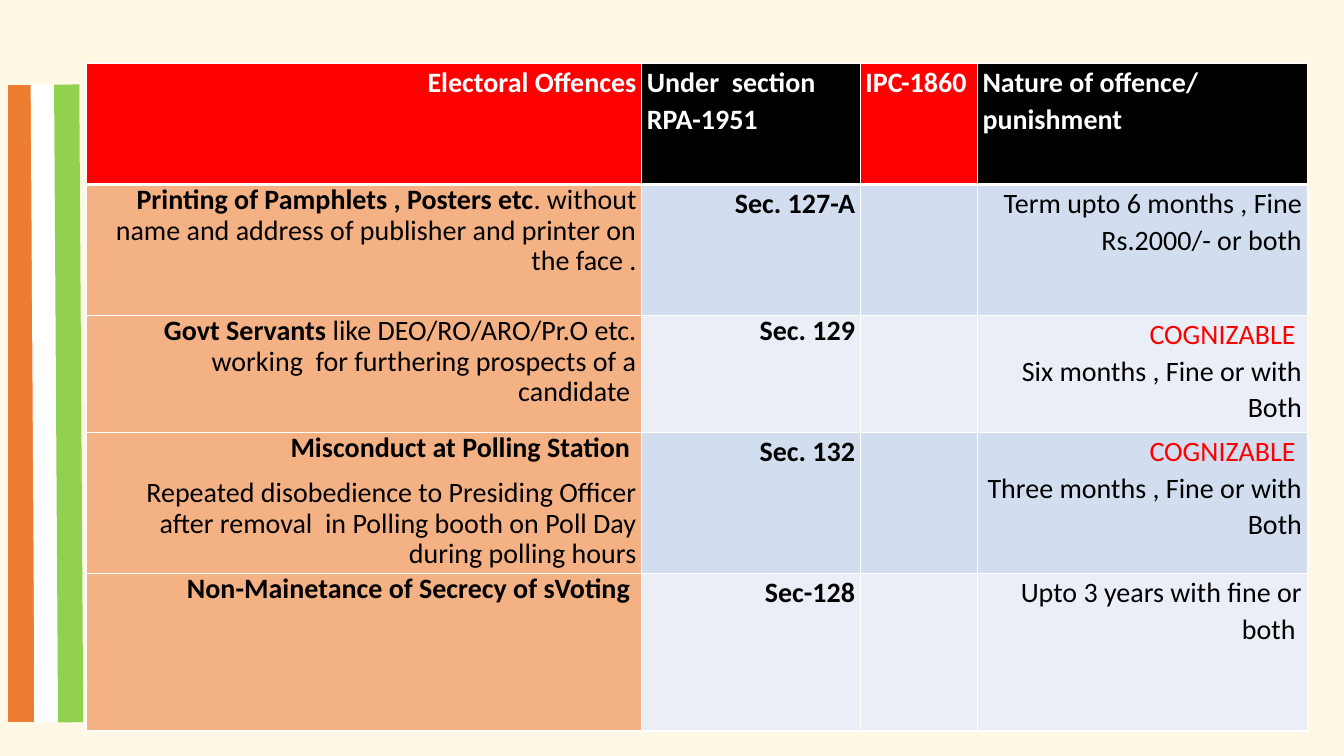
from dataclasses import dataclass

from lxml.etree import SubElement
from pptx import Presentation
from pptx.dml.color import RGBColor as Rgb
from pptx.enum.shapes import MSO_CONNECTOR as Connector
from pptx.enum.text import PP_ALIGN as Align
from pptx.oxml.ns import qn
from pptx.slide import Slide
from pptx.table import _Cell as Cell
from pptx.util import Cm, Pt


@dataclass(frozen=True)
class Theme:
    page: str = "FFF8E5"
    white: str = "FFFFFF"
    black: str = "000000"
    red: str = "FF0000"
    saffron: str = "ED7D31"
    green: str = "92D050"
    offence: str = "F4B183"
    band_dark: str = "D2DEEF"
    band_light: str = "EAEFF7"
    font: str = "Calibri"
    text_size: float = 20
    stripe_width: float = 18
    rule: float = 1
    header_rule: float = 3


THEME = Theme()


@dataclass(frozen=True)
class Span:
    text: str
    bold: bool = False
    color: str = THEME.black


@dataclass(frozen=True)
class Para:
    spans: tuple[Span, ...]
    align: Align = Align.RIGHT
    spacing: float = 1.07
    indent: float = 0


@dataclass(frozen=True)
class Stripe:
    top_x: float
    bottom_x: float
    color: str


def heading(text: str, align: Align = Align.LEFT) -> Para:
    return Para((Span(text, True, THEME.white),), align)


def plain(text: str, color: str = THEME.black) -> Para:
    return Para((Span(text, color=color),))


def section(text: str, spacing: float = 1.07) -> Para:
    return Para((Span(text, True),), spacing=spacing)


def offence(bold: str, rest: str = "", indent: float = 0) -> Para:
    spans = (Span(bold, True), Span(rest))
    return Para(tuple(span for span in spans if span.text), spacing=0.9, indent=indent)


COGNIZABLE = plain("COGNIZABLE ", THEME.red)

STRIPES = (
    Stripe(0.53, 0.53, THEME.saffron),
    Stripe(1.09, 1.19, THEME.white),
    Stripe(1.68, 1.78, THEME.green),
)
STRIPE_TOP, STRIPE_BOTTOM = 2.13, 18.2

TABLE_LEFT, TABLE_TOP = 2.18, 1.6
COLUMNS = (13.99, 5.51, 2.95, 8.31)
ROWS = (3.05, 3.3, 2.95, 3.56, 3.96)

CONTENT: tuple[tuple[tuple[Para, ...], ...], ...] = (
    (
        (heading("Electoral Offences", Align.RIGHT),),
        (heading("Under  section RPA-1951"),),
        (heading("IPC-1860"),),
        (heading("Nature of offence/"), heading("punishment")),
    ),
    (
        (offence("Printing of Pamphlets , Posters etc",
                 ". without name and address of publisher and printer on the face ."),),
        (section("Sec. 127-A"),),
        (),
        (plain("Term upto 6 months , Fine Rs.2000/- or both"),),
    ),
    (
        (offence("Govt Servants ",
                 "like DEO/RO/ARO/Pr.O etc. working  for furthering prospects of a candidate ",
                 indent=1),),
        (section("Sec. 129", spacing=0.9),),
        (),
        (COGNIZABLE, plain("Six months , Fine or with Both")),
    ),
    (
        (offence("Misconduct at Polling Station "),
         offence("", "Repeated disobedience to Presiding Officer after removal  "
                     "in Polling booth on Poll Day during polling hours")),
        (section("Sec. 132"),),
        (),
        (COGNIZABLE, plain("Three months , Fine or with Both")),
    ),
    (
        (offence("Non-Mainetance of Secrecy of sVoting ", indent=1.27),),
        (section("Sec-128"),),
        (),
        (plain("Upto 3 years with fine or both "),),
    ),
)


def draw_stripe(page: Slide, stripe: Stripe) -> None:
    line = page.shapes.add_connector(
        Connector.STRAIGHT, Cm(stripe.top_x), Cm(STRIPE_TOP),
        Cm(stripe.bottom_x), Cm(STRIPE_BOTTOM))
    line.line.color.rgb = Rgb.from_string(stripe.color)
    line.line.width = Pt(THEME.stripe_width)
    SubElement(line._element.spPr, qn("a:effectLst"))


def cell_color(row: int, column: int) -> str:
    if row == 0:
        return THEME.black if column % 2 else THEME.red
    if column == 0:
        return THEME.offence
    return THEME.band_dark if row % 2 else THEME.band_light


def draw_borders(cell: Cell, row: int) -> None:
    properties = cell._tc.get_or_add_tcPr()
    for side in ("L", "R", "T", "B"):
        thick = (row, side) in ((0, "B"), (1, "T"))
        width = Pt(THEME.header_rule if thick else THEME.rule)
        border = SubElement(properties, qn(f"a:ln{side}"), w=str(int(width)))
        fill = SubElement(border, qn("a:solidFill"))
        SubElement(fill, qn("a:srgbClr"), val=THEME.white)


def write_paras(cell: Cell, paras: tuple[Para, ...]) -> None:
    frame = cell.text_frame
    for index, item in enumerate(paras):
        para = frame.add_paragraph() if index else frame.paragraphs[0]
        para.alignment = item.align
        para.line_spacing = item.spacing
        if index and item.spacing < 1:
            para.space_before = Pt(10)
        if item.indent:
            para._p.get_or_add_pPr().set("marL", str(int(Cm(item.indent))))
        for span in item.spans:
            run = para.add_run()
            run.text = span.text
            run.font.name = THEME.font
            run.font.size = Pt(THEME.text_size)
            run.font.bold = span.bold
            run.font.color.rgb = Rgb.from_string(span.color)


def draw_table(page: Slide) -> None:
    table = page.shapes.add_table(
        len(ROWS), len(COLUMNS), Cm(TABLE_LEFT), Cm(TABLE_TOP),
        Cm(sum(COLUMNS)), Cm(sum(ROWS))).table
    for column, width in zip(table.columns, COLUMNS):
        column.width = Cm(width)
    for row, height in zip(table.rows, ROWS):
        row.height = Cm(height)
    for row, cells in enumerate(CONTENT):
        for column, paras in enumerate(cells):
            cell = table.cell(row, column)
            cell.margin_left = cell.margin_right = Cm(0.13)
            cell.margin_top = cell.margin_bottom = 0
            draw_borders(cell, row)
            cell.fill.solid()
            cell.fill.fore_color.rgb = Rgb.from_string(cell_color(row, column))
            write_paras(cell, paras)


def main() -> None:
    deck = Presentation()
    deck.slide_width, deck.slide_height = Cm(33.87), Cm(19.05)
    page = deck.slides.add_slide(deck.slide_layouts[6])
    page.background.fill.solid()
    page.background.fill.fore_color.rgb = Rgb.from_string(THEME.page)

    # Flag stripes on the left edge
    for stripe in STRIPES:
        draw_stripe(page, stripe)

    # Offences table
    draw_table(page)
    deck.save("out.pptx")


if __name__ == "__main__":
    main()
